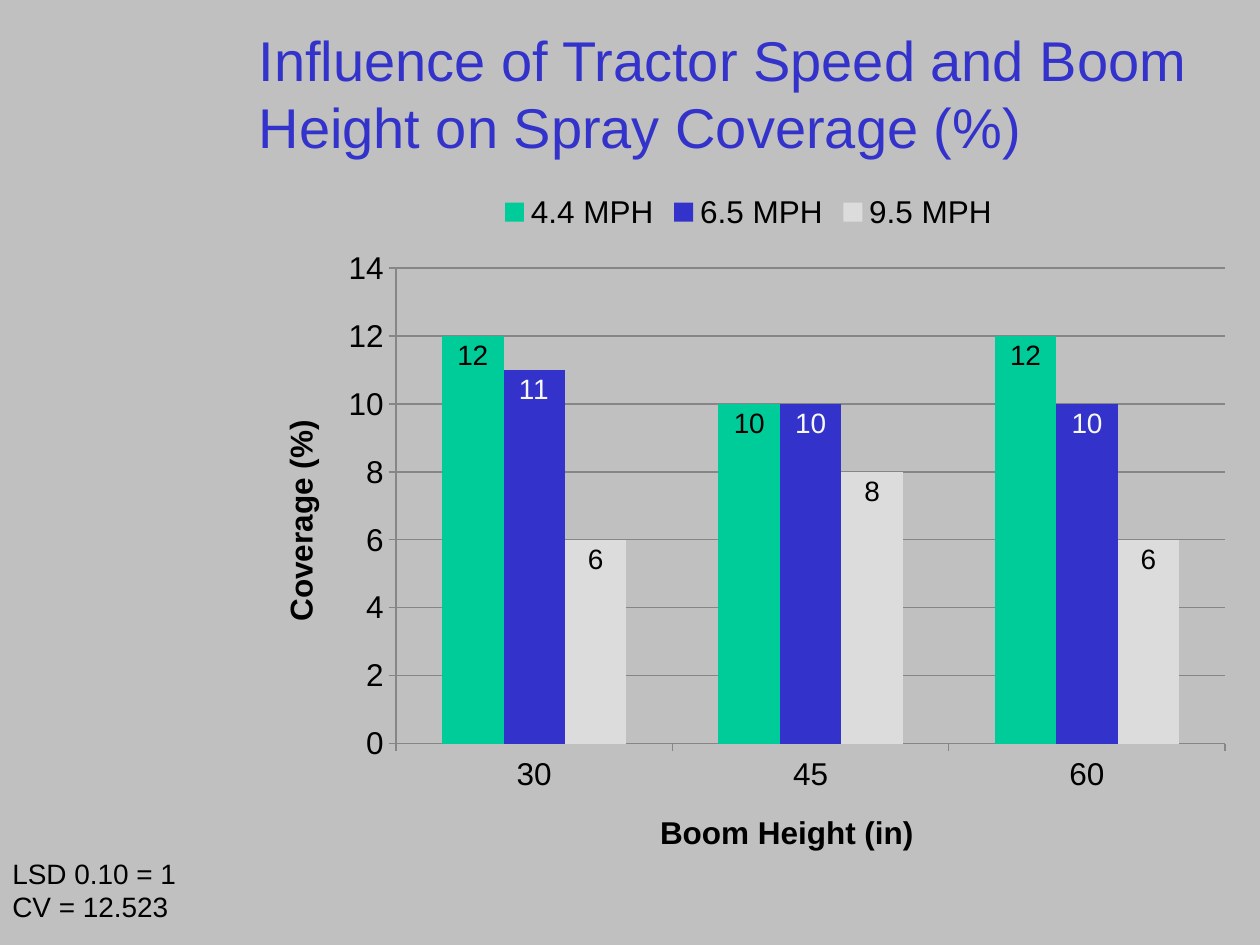
from dataclasses import dataclass

from pptx import Presentation
from pptx.chart.data import CategoryChartData
from pptx.dml.color import RGBColor
from pptx.enum.chart import XL_CHART_TYPE as ChartType
from pptx.enum.chart import XL_LABEL_POSITION as LabelPosition
from pptx.enum.chart import XL_LEGEND_POSITION as LegendPosition
from pptx.enum.chart import XL_TICK_MARK as TickMark
from pptx.enum.text import MSO_ANCHOR as Anchor
from pptx.enum.text import PP_ALIGN as Align
from pptx.util import Emu, Pt

PX = 914400 // 126
FONT = "Arial"
COLORS = {
    "background": "C0C0C0",
    "title": "3333CC",
    "text": "000000",
    "light_text": "F8F8F8",
    "line": "868686",
    "slow": "00CC99",
    "medium": "3333CC",
    "fast": "DCDCDC",
}


@dataclass(frozen=True)
class Box:
    left: int
    top: int
    width: int
    height: int

    def emu(self) -> tuple[Emu, ...]:
        return tuple(Emu(n * PX) for n in (self.left, self.top, self.width, self.height))


@dataclass(frozen=True)
class Speed:
    name: str
    coverage: tuple[int, ...]
    fill: str
    label: str = "text"


TITLE_BOX = Box(246, 14, 1004, 158)
CHART_BOX = Box(252, 179, 993, 702)
NOTE_BOX = Box(0, 850, 192, 81)
BOOM_HEIGHTS = ("30", "45", "60")
SPEEDS = (
    Speed("4.4 MPH", (12, 10, 12), "slow"),
    Speed("6.5 MPH", (11, 10, 10), "medium", "light_text"),
    Speed("9.5 MPH", (6, 8, 6), "fast"),
)
NOTES = ("LSD 0.10 = 1", "CV = 12.523")


def rgb(name: str) -> RGBColor:
    return RGBColor.from_string(COLORS[name])


def set_font(font, size: int, color: str = "text", bold: bool = False) -> None:
    font.name = FONT
    font.size = Pt(size)
    font.bold = bold
    font.color.rgb = rgb(color)


def set_line(line) -> None:
    line.color.rgb = rgb("line")
    line.width = Pt(0.75)


def add_title(slide, text: str) -> None:
    title = slide.shapes.title
    title.left, title.top, title.width, title.height = TITLE_BOX.emu()
    frame = title.text_frame
    frame.text = text
    frame.word_wrap = True
    frame.vertical_anchor = Anchor.MIDDLE
    paragraph = frame.paragraphs[0]
    paragraph.alignment = Align.LEFT
    set_font(paragraph.font, 32, "title")


def format_axis(axis, title: str) -> None:
    axis.has_title = True
    frame = axis.axis_title.text_frame
    frame.text = title
    set_font(frame.paragraphs[0].font, 18, bold=True)
    axis.major_tick_mark = TickMark.OUTSIDE
    axis.minor_tick_mark = TickMark.NONE
    set_font(axis.tick_labels.font, 18)
    set_line(axis.format.line)


def format_series(series, speed: Speed) -> None:
    series.format.fill.solid()
    series.format.fill.fore_color.rgb = rgb(speed.fill)
    series.invert_if_negative = False
    labels = series.data_labels
    labels.show_value = True
    labels.position = LabelPosition.INSIDE_END
    set_font(labels.font, 16, speed.label)


def add_coverage_chart(slide) -> None:
    data = CategoryChartData(number_format="General")
    data.categories = BOOM_HEIGHTS
    for speed in SPEEDS:
        data.add_series(speed.name, speed.coverage)
    chart = slide.shapes.add_chart(
        ChartType.COLUMN_CLUSTERED, *CHART_BOX.emu(), data
    ).chart
    set_font(chart.font, 18)
    chart.has_title = False
    chart.has_legend = True
    chart.legend.position = LegendPosition.TOP
    chart.legend.include_in_layout = False
    set_font(chart.legend.font, 18)

    format_axis(chart.category_axis, "Boom Height (in)")
    value_axis = chart.value_axis
    format_axis(value_axis, "Coverage (%)")
    value_axis.minimum_scale = 0
    value_axis.maximum_scale = 14
    value_axis.major_unit = 2
    value_axis.has_major_gridlines = True
    set_line(value_axis.major_gridlines.format.line)

    plot = chart.plots[0]
    plot.gap_width = 150
    plot.overlap = 0
    plot.vary_by_categories = False
    for series, speed in zip(plot.series, SPEEDS):
        format_series(series, speed)


def add_notes(slide) -> None:
    frame = slide.shapes.add_textbox(*NOTE_BOX.emu()).text_frame
    frame.word_wrap = False
    frame.text = "\n".join(NOTES)
    for paragraph in frame.paragraphs:
        set_font(paragraph.font, 16)


def main() -> None:
    presentation = Presentation()
    presentation.slide_width = Emu(1260 * PX)
    presentation.slide_height = Emu(945 * PX)
    slide = presentation.slides.add_slide(presentation.slide_layouts[5])
    slide.background.fill.solid()
    slide.background.fill.fore_color.rgb = rgb("background")
    add_title(slide, "Influence of Tractor Speed and Boom Height on Spray Coverage (%)")
    add_coverage_chart(slide)
    add_notes(slide)
    presentation.save("out.pptx")


if __name__ == "__main__":
    main()
